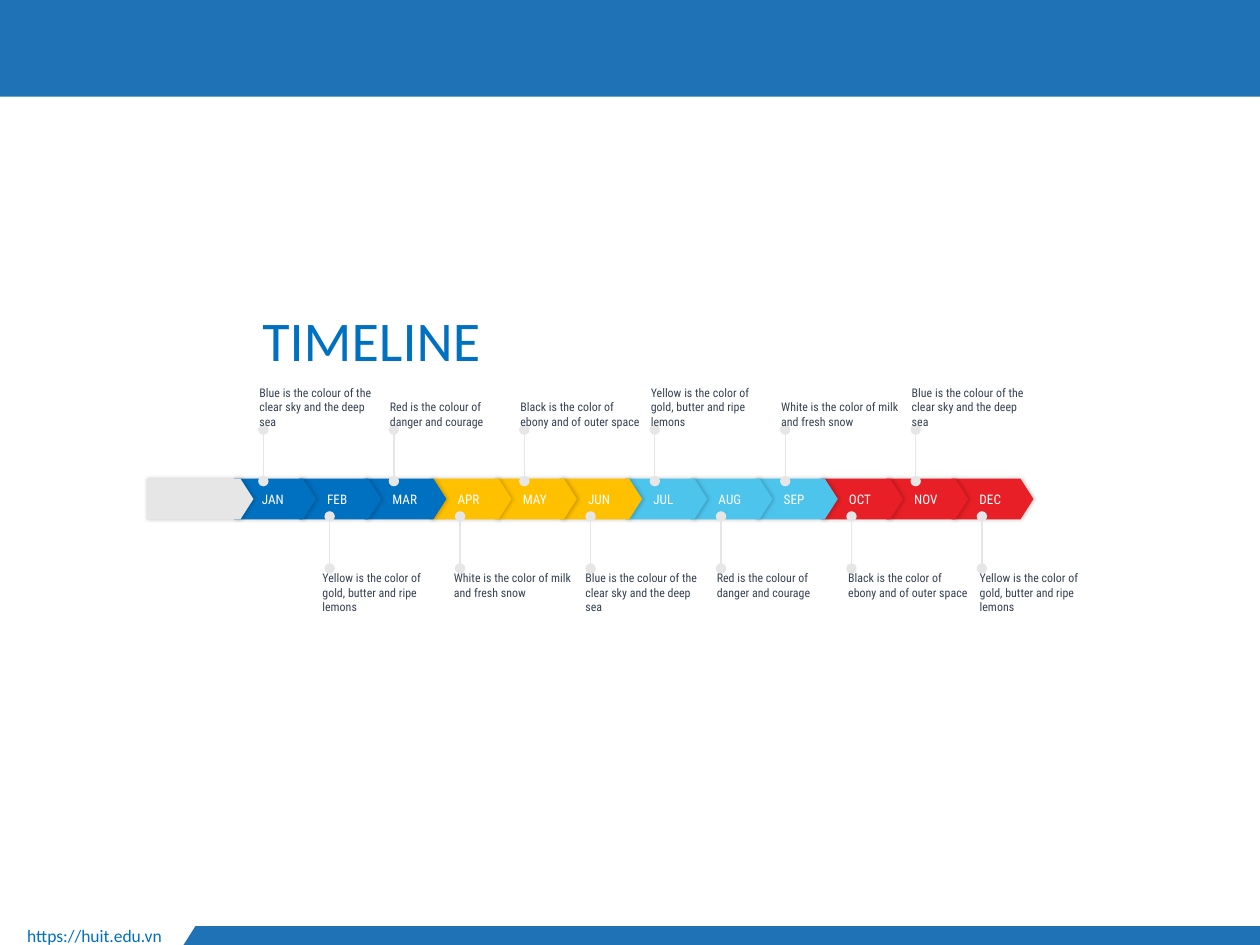
from lxml.etree import SubElement
from pptx import Presentation
from pptx.dml.color import RGBColor
from pptx.enum.shapes import MSO_CONNECTOR, MSO_SHAPE
from pptx.enum.text import MSO_ANCHOR, MSO_AUTO_SIZE, PP_ALIGN
from pptx.oxml import parse_xml
from pptx.oxml.ns import nsdecls, qn
from pptx.util import Cm, Pt

BAND = RGBColor(0x20, 0x72, 0xB7)
BLUE = RGBColor(0x00, 0x70, 0xC0)
GOLD = RGBColor(0xFF, 0xC0, 0x00)
SKY = RGBColor(0x4C, 0xC4, 0xEB)
RED = RGBColor(0xE8, 0x1F, 0x26)
GREY = RGBColor(0xE7, 0xE6, 0xE6)
INK = RGBColor(0x35, 0x42, 0x53)
WHITE = RGBColor(0xFF, 0xFF, 0xFF)

COND = "Roboto Condensed"
SHADOW = (
    f'<a:outerShdw {nsdecls("a")} blurRad="27940" dist="10160" dir="0" '
    'algn="l" rotWithShape="0"><a:srgbClr val="000000">'
    '<a:alpha val="20000"/></a:srgbClr></a:outerShdw>'
)


def write(shape, text, size, font, color, anchor, inset):
    frame = shape.text_frame
    frame.word_wrap = True
    frame.auto_size = MSO_AUTO_SIZE.NONE
    frame.vertical_anchor = anchor
    frame.margin_left, frame.margin_top, frame.margin_right, frame.margin_bottom = [
        Cm(side) for side in inset]
    line = frame.paragraphs[0]
    line.alignment = PP_ALIGN.LEFT
    run = line.add_run()
    run.text = text
    run.font.size = Pt(size)
    run.font.name = font
    run.font.color.rgb = color
    return line


def paint(shape, color):
    shape.fill.solid()
    shape.fill.fore_color.rgb = color
    shape.line.fill.background()
    shape.shadow.inherit = False


deck = Presentation()
deck.slide_width, deck.slide_height = Cm(25.4), Cm(19.05)
slide = deck.slides.add_slide(deck.slide_layouts[5])
shapes = slide.shapes

title = shapes.title
title.left, title.top, title.width, title.height = Cm(5.11), Cm(6.3), Cm(11.99), Cm(1.42)
head = write(title, "TIMELINE", 32, "Calibri", BLUE, MSO_ANCHOR.BOTTOM, [0.18] * 4)
head.line_spacing = 0.9

banner = shapes.add_shape(MSO_SHAPE.RECTANGLE, Cm(0), Cm(-0.03), Cm(25.4), Cm(1.98))
paint(banner, BAND)

pen = shapes.build_freeform(Cm(3.94), Cm(18.67))
pen.add_line_segments([(Cm(25.4), Cm(18.67)), (Cm(25.4), Cm(19.05)), (Cm(3.7), Cm(19.05))])
paint(pen.convert_to_shape(), BAND)

site = shapes.add_textbox(Cm(0.3), Cm(18.52), Cm(3.38), Cm(0.7))
write(site, "https://huit.edu.vn", 10, "Calibri", BLUE, MSO_ANCHOR.TOP,
      [0.25, 0.13, 0.25, 0.13])

months = ["JAN", "FEB", "MAR", "APR", "MAY", "JUN",
          "JUL", "AUG", "SEP", "OCT", "NOV", "DEC"]
hues = [BLUE, GOLD, SKY, RED]
left, pitch = 4.72, 15.78 / 12
tags = [(left + i * pitch, 1.65, hues[i // 3], name) for i, name in enumerate(months)]
tags = tags[::-1] + [(2.95, 2.16, GREY, "")]

for x, width, hue, name in tags:
    tag = shapes.add_shape(MSO_SHAPE.PENTAGON, Cm(x), Cm(9.65), Cm(width), Cm(0.82))
    tag.adjustments[0] = 0.32
    paint(tag, hue)
    tag._element.spPr.find(qn("a:effectLst")).append(parse_xml(SHADOW))
    if name:
        write(tag, name, 7.5, COND, WHITE, MSO_ANCHOR.MIDDLE, [0.56, 0, 0, 0])

blue = "Blue is the colour of the clear sky and the deep sea"
red = "Red is the colour of danger and courage"
black = "Black is the color of ebony and of outer space"
gold = "Yellow is the color of gold, butter and ripe lemons"
white = "White is the color of milk and fresh snow"
upper = [blue, red, black, gold, white, blue]
lower = [gold, white, blue, red, black, gold]

rows = [
    (upper, left + 0.59, 5.23, 2 * pitch, 9.7, 8.66, 7.52, MSO_ANCHOR.BOTTOM),
    (lower, left + pitch + 0.61, 6.5, 2.65, 11.46, 10.41, 11.51, MSO_ANCHOR.TOP),
]
for notes, stem, start, gap, low, high, top, anchor in rows:
    for i, note in enumerate(notes):
        x = Cm(stem + 2 * i * pitch)
        pin = shapes.add_connector(MSO_CONNECTOR.STRAIGHT, x, Cm(low), x, Cm(high))
        pin.line.color.rgb = GREY
        pin.line.width = Pt(0.75)
        props = pin._element.spPr
        for end in ("a:headEnd", "a:tailEnd"):
            SubElement(props.find(qn("a:ln")), qn(end), type="oval")
        SubElement(props, qn("a:effectLst"))
        last = notes is lower and i == 5
        box = shapes.add_textbox(Cm(start + i * gap), Cm(top),
                                 Cm(2.06 if last else 2.49), Cm(1.12))
        write(box, note, 6.8, COND, INK, anchor, [0] * 4)

deck.save("out.pptx")
